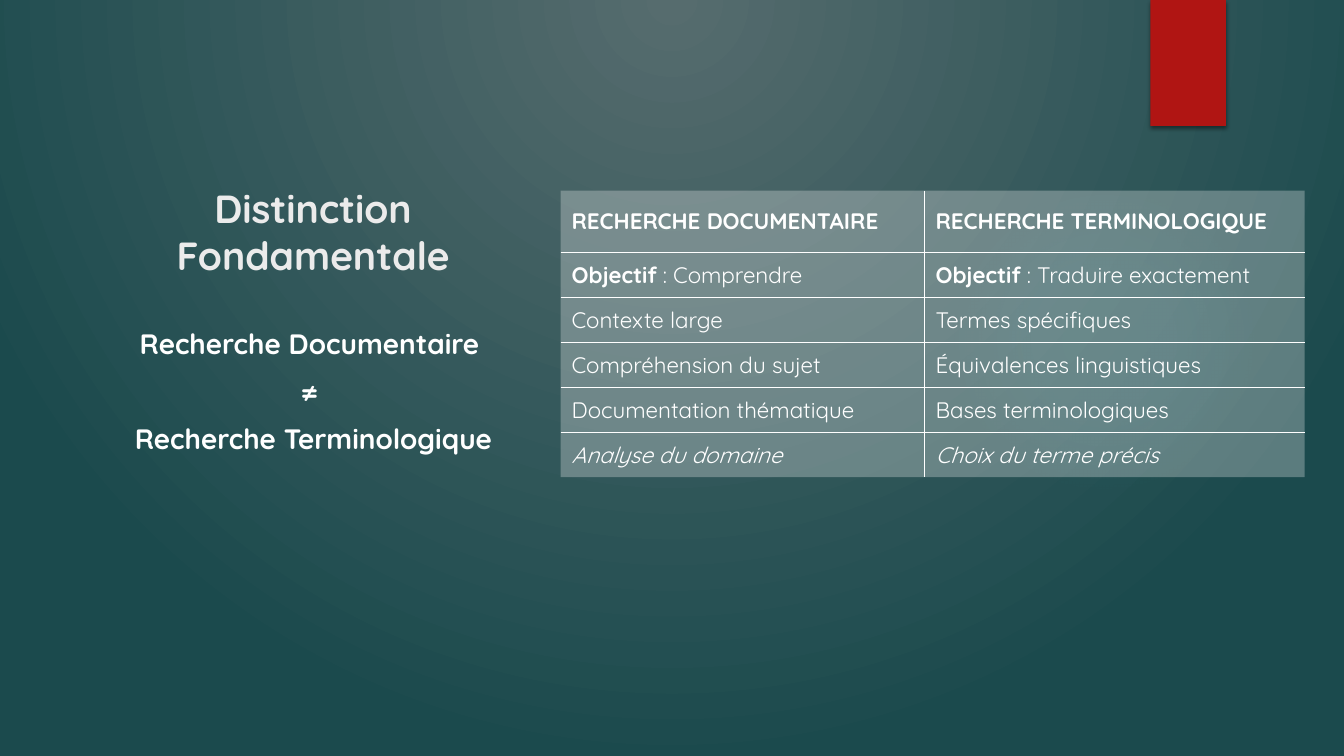
"""Build a slide contrasting documentary and terminological research."""
from dataclasses import dataclass

from pptx import Presentation
from pptx.dml.color import RGBColor
from pptx.enum.shapes import MSO_SHAPE
from pptx.enum.text import MSO_ANCHOR, PP_ALIGN
from pptx.oxml import parse_xml
from pptx.oxml.ns import nsdecls, qn
from pptx.util import Inches, Pt

CENTER = PP_ALIGN.CENTER
TOP, MIDDLE = MSO_ANCHOR.TOP, MSO_ANCHOR.MIDDLE
OVAL, RECTANGLE = MSO_SHAPE.OVAL, MSO_SHAPE.RECTANGLE
TITLE_ONLY = 5


@dataclass(frozen=True)
class Theme:
    font: str = "Quicksand"
    title_size: int = 28
    body_size: int = 20
    table_size: int = 16
    title_color: str = "EBEBEB"
    text_color: str = "FFFFFF"
    background_center: str = "566C6E"
    background_edge: str = "1B4A4D"
    glow: str = "50B9C1"
    ribbon: str = "B01513"
    shadow: str = "000000"
    cell: str = "F2F2F2"
    cell_opacity: int = 30
    rule: str = "FFFFFF"
    rule_width: float = 0.5


def color_xml(color, opacity=100):
    return f'<a:srgbClr val="{color}"><a:alpha val="{opacity * 1000}"/></a:srgbClr>'


def radial_xml(stops, focus):
    left, top, right, bottom = (edge * 1000 for edge in focus)
    stops_xml = "".join(
        f'<a:gs pos="{position * 1000}">{color_xml(color, opacity)}</a:gs>'
        for position, color, opacity in stops)
    return (f'<a:gradFill {nsdecls("a")} rotWithShape="1"><a:gsLst>{stops_xml}</a:gsLst>'
            f'<a:path path="circle"><a:fillToRect l="{left}" t="{top}" r="{right}" '
            f'b="{bottom}"/></a:path></a:gradFill>')


def replace_solid_fill(properties, fill_xml):
    properties.replace(properties.find(qn("a:solidFill")), parse_xml(fill_xml))


class SlideBuilder:
    def __init__(self, slide, theme):
        self.slide = slide
        self.theme = theme

    def background(self):
        self.slide.background.fill.solid()
        properties = self.slide.element.find(".//" + qn("p:bgPr"))
        stops = [(0, self.theme.background_center, 100), (100, self.theme.background_edge, 100)]
        replace_solid_fill(properties, radial_xml(stops, (43, 0, 43, 100)))

    def shape(self, kind, box, color):
        shape = self.slide.shapes.add_shape(kind, *map(Inches, box))
        shape.fill.solid()
        shape.fill.fore_color.rgb = RGBColor.from_string(color)
        shape.line.fill.background()
        shape.shadow.inherit = False
        return shape.element.spPr

    def glow(self, box):
        properties = self.shape(OVAL, box, self.theme.glow)
        stops = [(position, self.theme.glow, opacity)
                 for position, opacity in ((0, 7), (36, 6), (69, 0))]
        replace_solid_fill(properties, radial_xml(stops, (50, 50, 50, 50)))

    def ribbon(self, box):
        properties = self.shape(RECTANGLE, box, self.theme.ribbon)
        properties.find(qn("a:effectLst")).append(parse_xml(
            f'<a:outerShdw {nsdecls("a")} blurRad="{Pt(3)}" dist="{Pt(2)}" dir="5400000" '
            f'rotWithShape="0">{color_xml(self.theme.shadow, 45)}</a:outerShdw>'))

    def run(self, paragraph, text, size, color, bold=False, italic=False):
        run = paragraph.add_run()
        run.text = text
        font = run.font
        font.name, font.size, font.bold, font.italic = self.theme.font, Pt(size), bold, italic
        font.color.rgb = RGBColor.from_string(color)

    def centered_lines(self, shape, lines, size, color, anchor):
        frame = shape.text_frame
        frame.word_wrap = True
        frame.vertical_anchor = anchor
        for index, line in enumerate(lines):
            paragraph = frame.add_paragraph() if index else frame.paragraphs[0]
            paragraph.alignment = CENTER
            paragraph.space_before = Pt(10 if index else 0)
            self.run(paragraph, line, size, color, bold=True)

    def title(self, text, box):
        title = self.slide.shapes.title
        title.left, title.top, title.width, title.height = map(Inches, box)
        self.centered_lines(title, [text], self.theme.title_size, self.theme.title_color, MIDDLE)

    def body(self, lines, box):
        body = self.slide.shapes.add_textbox(*map(Inches, box))
        self.centered_lines(body, lines, self.theme.body_size, self.theme.text_color, TOP)

    def cell(self, cell, runs, ruled_sides):
        cell.margin_left = Inches(0.11)
        cell.margin_top = cell.margin_right = cell.margin_bottom = Inches(0.09)
        cell.vertical_anchor = MIDDLE
        for text, style in runs:
            self.run(cell.text_frame.paragraphs[0], text, self.theme.table_size,
                     self.theme.text_color, **style)
        properties = cell._tc.get_or_add_tcPr()
        for side, ruled in ruled_sides.items():
            paint = (f"<a:solidFill>{color_xml(self.theme.rule)}</a:solidFill>"
                     if ruled else "<a:noFill/>")
            properties.append(parse_xml(
                f'<a:ln{side} {nsdecls("a")} w="{Pt(self.theme.rule_width)}">{paint}</a:ln{side}>'))
        cell.fill.solid()
        replace_solid_fill(properties, (
            f'<a:solidFill {nsdecls("a")}>'
            f'{color_xml(self.theme.cell, self.theme.cell_opacity)}</a:solidFill>'))

    def table(self, rows, box, column_widths, header_height, row_height):
        frame = self.slide.shapes.add_table(len(rows), len(column_widths), *map(Inches, box))
        table = frame.table
        table.first_row = table.horz_banding = False
        for column, width in zip(table.columns, column_widths):
            column.width = Inches(width)
        last_row, last_column = len(rows) - 1, len(column_widths) - 1
        for r, row in enumerate(rows):
            table.rows[r].height = Inches(row_height if r else header_height)
            for c, runs in enumerate(row):
                ruled_sides = {"L": c > 0, "R": c < last_column, "T": r > 0, "B": r < last_row}
                self.cell(table.cell(r, c), runs, ruled_sides)
        frame.height = Inches(box[3])


def main():
    presentation = Presentation()
    presentation.slide_width, presentation.slide_height = Inches(13.33), Inches(7.5)
    slide = presentation.slides.add_slide(presentation.slide_layouts[TITLE_ONLY])
    builder = SlideBuilder(slide, Theme())
    builder.background()
    builder.glow((9.41, 1.83, 3.08, 3.08))
    builder.ribbon((11.41, 0, 0.75, 1.25))
    builder.title("Distinction Fondamentale", (0.82, 1.72, 4.57, 1.15))
    builder.body(["Recherche Documentaire ", "≠ ", "Recherche Terminologique"],
                 (0.83, 3.19, 4.56, 1.75))

    plain, bold, italic = {}, {"bold": True}, {"italic": True}
    headers = ["RECHERCHE DOCUMENTAIRE", "RECHERCHE TERMINOLOGIQUE"]
    goals = [" : Comprendre", " : Traduire exactement"]
    features = [
        ("Contexte large", "Termes spécifiques"),
        ("Compréhension du sujet", "Équivalences linguistiques"),
        ("Documentation thématique", "Bases terminologiques"),
    ]
    outcomes = ["Analyse du domaine", "Choix du terme précis"]
    comparison = [
        [[(header, bold)] for header in headers],
        [[("Objectif", bold), (goal, plain)] for goal in goals],
        *[[[(feature, plain)] for feature in pair] for pair in features],
        [[(outcome, italic)] for outcome in outcomes],
    ]
    builder.table(comparison, (5.56, 1.89, 7.39, 2.81), (3.61, 3.77), 0.61, 0.41)
    presentation.save("out.pptx")


if __name__ == "__main__":
    main()
